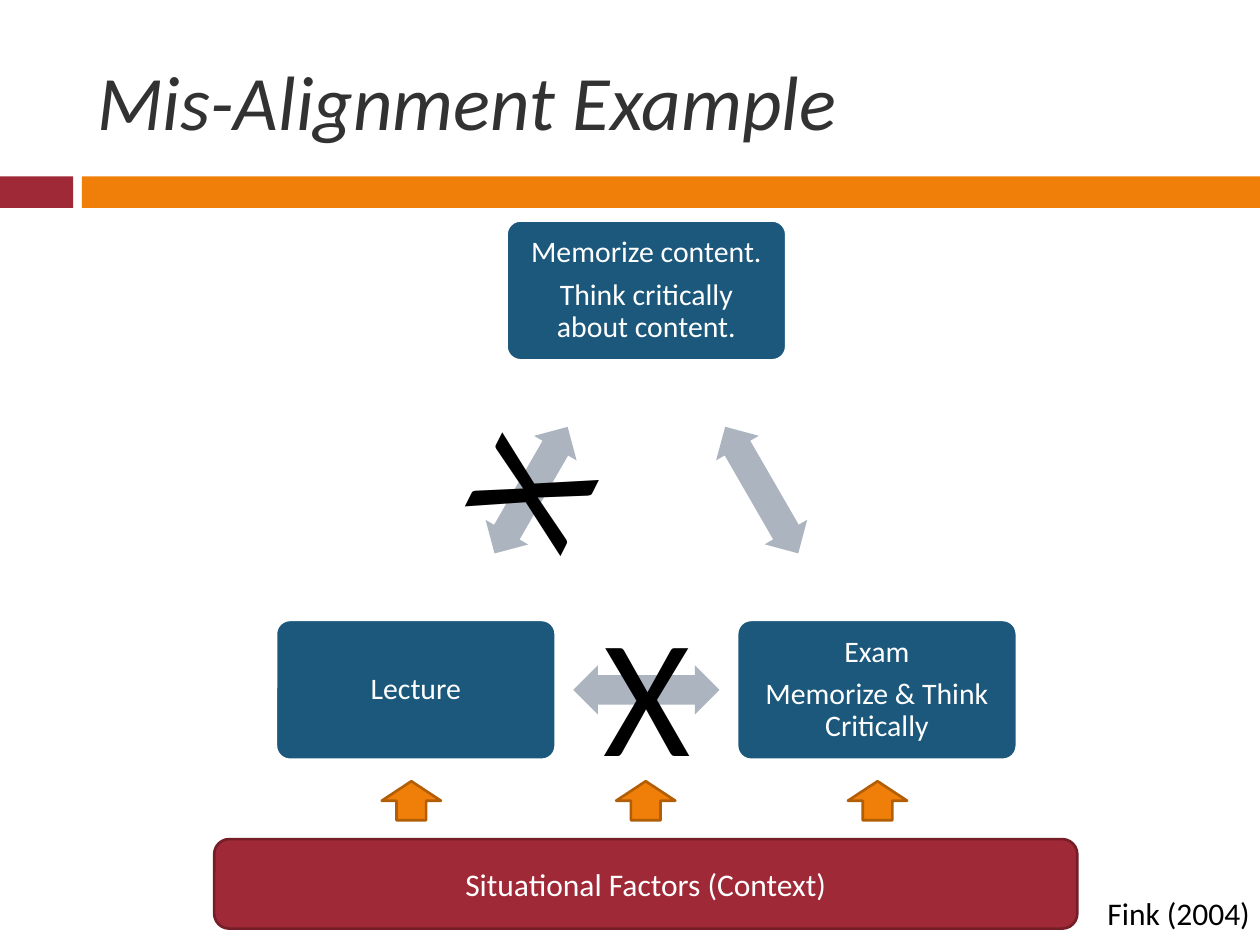
import pptx
import pptx.util
import pptx.dml.color
import pptx.enum.shapes
import pptx.enum.text

Inches, Pt = pptx.util.Inches, pptx.util.Pt
RGBColor = pptx.dml.color.RGBColor
SHAPE = pptx.enum.shapes.MSO_SHAPE
ALIGN = pptx.enum.text.PP_ALIGN
ANCHOR = pptx.enum.text.MSO_ANCHOR
AUTO_SIZE = pptx.enum.text.MSO_AUTO_SIZE

FONT = "Calibri"
RED = RGBColor(0x9F, 0x29, 0x36)
DARK_RED = RGBColor(0x76, 0x1E, 0x28)
ORANGE = RGBColor(0xF0, 0x7F, 0x09)
DARK_ORANGE = RGBColor(0xB2, 0x5E, 0x07)
BLUE = RGBColor(0x1B, 0x58, 0x7C)
GRAY = RGBColor(0xAC, 0xB5, 0xBF)
CHARCOAL = RGBColor(0x32, 0x32, 0x32)
WHITE = RGBColor(0xFF, 0xFF, 0xFF)
BLACK = RGBColor(0, 0, 0)


def add_box(page, kind, left, top, width, height, fill, line=None):
    box = page.shapes.add_shape(
        kind, Inches(left), Inches(top), Inches(width), Inches(height))
    box.shadow.inherit = False
    box.fill.solid()
    box.fill.fore_color.rgb = fill
    if line is None:
        box.line.fill.background()
    else:
        box.line.color.rgb = line
        box.line.width = Pt(1.5)
    return box


def write(box, text, size, color, align=ALIGN.LEFT, italic=None):
    box.text_frame.text = text
    for para in box.text_frame.paragraphs:
        para.alignment = align
        for span in para.runs:
            span.font.name = FONT
            span.font.size = Pt(size)
            span.font.color.rgb = color
            span.font.italic = italic


def add_label(page, text, left, top, width, height, size, rotation=0):
    label = page.shapes.add_textbox(
        Inches(left), Inches(top), Inches(width), Inches(height))
    label.text_frame.word_wrap = False
    label.text_frame.auto_size = AUTO_SIZE.SHAPE_TO_FIT_TEXT
    label.rotation = rotation
    write(label, text, size, BLACK)


def add_header(page, left, top, width, height):
    # Two-colour band under the title
    add_box(page, SHAPE.RECTANGLE, 0, 1.4, 0.58, 0.25, RED)
    add_box(page, SHAPE.RECTANGLE, 0.65, 1.4, 9.35, 0.25, ORANGE)

    title = page.shapes.title
    title.left, title.top = Inches(left), Inches(top)
    title.width, title.height = Inches(width), Inches(height)
    write(title, "Mis-Alignment Example", 44, CHARCOAL, italic=True)
    title.text_frame.vertical_anchor = ANCHOR.MIDDLE
    title.text_frame.auto_size = AUTO_SIZE.NONE


def add_triangle(page, left, top, width, height):
    node_width, node_height = 2.22, 1.11
    arrow_width, arrow_height = 1.16, 0.39
    middle = left + width / 2
    right = left + width - node_width
    bottom = top + height - node_height

    # Nodes at the three corners
    nodes = [
        ("Memorize content.\nThink critically about content.",
         middle - node_width / 2, top),
        ("Exam\nMemorize & Think Critically", right, bottom),
        ("Lecture", left, bottom),
    ]
    for text, node_left, node_top in nodes:
        node = add_box(page, SHAPE.ROUNDED_RECTANGLE, node_left, node_top,
                       node_width, node_height, BLUE, WHITE)
        node.adjustments[0] = 0.1
        write(node, text, 17, WHITE, ALIGN.CENTER)
        frame = node.text_frame
        frame.word_wrap = True
        frame.vertical_anchor = ANCHOR.MIDDLE
        frame.margin_left = frame.margin_right = Inches(0.1)
        frame.margin_top = frame.margin_bottom = Inches(0.1)
        for para in frame.paragraphs:
            para.line_spacing = 0.9
            para.space_after = Pt(6)

    # Arrows halfway between each pair of node centres
    side = (width - node_width) / 4
    halfway = (top + bottom + node_height) / 2
    arrows = [
        (middle + side, halfway, 60),
        (middle, bottom + node_height / 2, 180),
        (middle - side, halfway, 300),
    ]
    for center_x, center_y, rotation in arrows:
        arrow = add_box(page, SHAPE.LEFT_RIGHT_ARROW,
                        center_x - arrow_width / 2, center_y - arrow_height / 2,
                        arrow_width, arrow_height, GRAY)
        arrow.adjustments[0] = 0.6
        arrow.adjustments[1] = 0.5
        arrow.rotation = rotation


def add_context(page, left, top, width, height):
    bar = add_box(page, SHAPE.ROUNDED_RECTANGLE, left, top, width, height,
                  RED, DARK_RED)
    write(bar, "Situational Factors (Context)", 18, WHITE, ALIGN.CENTER)
    bar.text_frame.vertical_anchor = ANCHOR.MIDDLE

    # Arrows rising from the bar
    for arrow_left in (3.03, 4.89, 6.73):
        add_box(page, SHAPE.UP_ARROW, arrow_left, top - 0.46, 0.47, 0.31,
                ORANGE, DARK_ORANGE)


def main():
    deck = pptx.Presentation()
    deck.slide_width, deck.slide_height = Inches(10), Inches(7.5)
    page = deck.slides.add_slide(deck.slide_layouts[5])

    add_header(page, 0.67, 0.25, 8.92, 1.08)
    add_triangle(page, 2.19, 1.75, 5.88, 4.28)
    add_context(page, 1.7, 6.66, 6.85, 0.71)

    # Citation and the crosses over the broken links
    add_label(page, "Fink (2004)", 8.69, 7.05, 1.35, 0.4, 18)
    add_label(page, "X", 3.68, 2.99, 0.95, 1.72, 96, rotation=296.8)
    add_label(page, "X", 4.69, 4.62, 0.95, 1.72, 96)

    deck.save("out.pptx")


if __name__ == "__main__":
    main()
